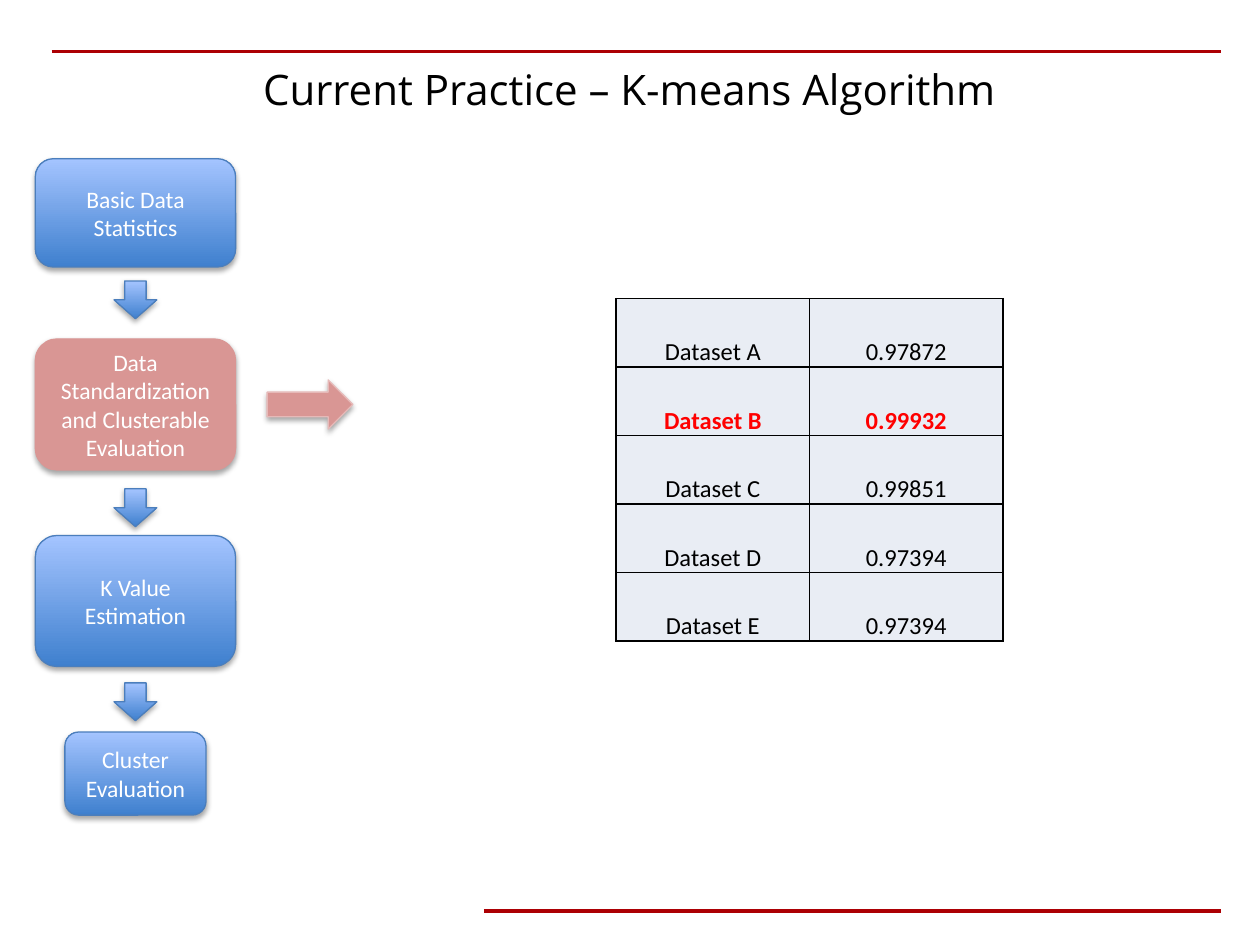
import pptx
import pptx.util
import pptx.dml.color
import pptx.enum.shapes
import pptx.enum.text
import pptx.oxml
import pptx.oxml.ns
from dataclasses import dataclass
from lxml import etree

SHAPE = pptx.enum.shapes.MSO_SHAPE
ANCHOR = pptx.enum.text.MSO_ANCHOR
UNIT = pptx.util.Inches(0.1)  # the slide is a grid of 100 columns by 75 rows


@dataclass(frozen=True)
class Theme:
    rule: str = "AC0004"
    text: str = "000000"
    inverse: str = "FFFFFF"
    alert: str = "FF0000"
    step_low: str = "3F80CE"
    step_high: str = "A4C4FF"
    step_line: str = "4B7EBC"
    active: str = "D99694"
    active_line: str = "E6B9B8"
    cell: str = "E9EDF4"
    title_font: str = "Open Sans"
    body_font: str = "Calibri"
    title_size: float = 24
    step_size: float = 13.5
    cell_size: float = 14


THEME = Theme()


def rgb(value):
    return pptx.dml.color.RGBColor.from_string(value)


def grid(*values):
    return [round(v * UNIT) for v in values]


def put_text(tf, text, size, color, font=THEME.body_font, bold=False, anchor=ANCHOR.MIDDLE):
    tf.word_wrap = True
    tf.vertical_anchor = anchor
    p = tf.paragraphs[0]
    p.alignment = pptx.enum.text.PP_ALIGN.CENTER
    r = p.add_run()
    r.text = text
    r.font.name = font
    r.font.size = pptx.util.Pt(size)
    r.font.bold = bold
    r.font.color.rgb = rgb(color)


def add_effects(sp, shadow):
    """Replace the inherited effects by a soft drop shadow, or by none."""
    effects = etree.SubElement(sp._element.spPr, pptx.oxml.ns.qn("a:effectLst"))
    if shadow:
        effects.append(pptx.oxml.parse_xml(
            f'<a:outerShdw {pptx.oxml.ns.nsdecls("a")} blurRad="39370" dist="22860" '
            'dir="5400000" rotWithShape="0"><a:srgbClr val="000000">'
            '<a:alpha val="35000"/></a:srgbClr></a:outerShdw>'))


def add_block(s, kind, box, fill=None, line=THEME.step_line):
    """Add a shadowed shape, with the step gradient unless a fill is given."""
    sp = s.shapes.add_shape(kind, *grid(*box))
    if fill:
        sp.fill.solid()
        sp.fill.fore_color.rgb = rgb(fill)
    else:
        sp.fill.gradient()
        sp.fill.gradient_angle = 90
        for stop, color in zip(sp.fill.gradient_stops, (THEME.step_low, THEME.step_high)):
            stop.color.rgb = rgb(color)
    sp.line.color.rgb = rgb(line)
    sp.line.width = pptx.util.Pt(0.75)
    add_effects(sp, shadow=True)
    return sp


def add_rule(s, left, right, y):
    cx = s.shapes.add_connector(
        pptx.enum.shapes.MSO_CONNECTOR.STRAIGHT, *grid(left, y, right, y))
    cx.line.color.rgb = rgb(THEME.rule)
    cx.line.width = pptx.util.Pt(2)
    add_effects(cx, shadow=False)


def add_title(s, box, text):
    title = s.shapes.title
    title.left, title.top, title.width, title.height = grid(*box)
    put_text(title.text_frame, text, THEME.title_size, THEME.text,
             font=THEME.title_font, anchor=ANCHOR.TOP)


def add_flow(s, box, steps, arrow_tops, active):
    """Stack centred steps with down arrows; a side arrow leaves the active one."""
    x, y, w, _ = box
    for i, (text, top, width, height) in enumerate(steps):
        colors = {"fill": THEME.active, "line": THEME.active} if i == active else {}
        sp = add_block(s, SHAPE.ROUNDED_RECTANGLE,
                       (x + (w - width) / 2, y + top, width, height), **colors)
        put_text(sp.text_frame, text, THEME.step_size, THEME.inverse)
    for top in arrow_tops:
        add_block(s, SHAPE.DOWN_ARROW, (x + (w - 3.4) / 2, y + top, 3.4, 3))
    _, top, _, height = steps[active]
    add_block(s, SHAPE.RIGHT_ARROW, (x + w + 2.5, y + top + (height - 3.9) / 2, 6.8, 3.9),
              fill=THEME.active, line=THEME.active_line)


def add_borders(cell):
    tc_pr = cell._tc.get_or_add_tcPr()
    for i, side in enumerate(("lnL", "lnR", "lnT", "lnB")):
        tc_pr.insert(i, pptx.oxml.parse_xml(
            f'<a:{side} {pptx.oxml.ns.nsdecls("a")} w="12700"><a:solidFill>'
            f'<a:srgbClr val="{THEME.text}"/></a:solidFill></a:{side}>'))


def add_scores(s, box, rows, highlight):
    table = s.shapes.add_table(len(rows), len(rows[0]), *grid(*box)).table
    table.first_row = table.horz_banding = False
    for i, row in enumerate(rows):
        for j, text in enumerate(row):
            cell = table.cell(i, j)
            cell.fill.solid()
            cell.fill.fore_color.rgb = rgb(THEME.cell)
            cell.margin_left = cell.margin_right = cell.margin_top = pptx.util.Inches(0.01)
            cell.margin_bottom = 0
            cell.vertical_anchor = ANCHOR.BOTTOM
            hit = i == highlight
            put_text_in_cell = cell.text_frame
            put_text(put_text_in_cell, text, THEME.cell_size,
                     THEME.alert if hit else THEME.text, bold=hit, anchor=None)
            add_borders(cell)


def main():
    prs = pptx.Presentation()
    prs.slide_width, prs.slide_height = grid(100, 75)
    s = prs.slides.add_slide(prs.slide_layouts.get_by_name("Title Only"))
    add_rule(s, 38.4, 96.9, 72.3)
    add_rule(s, 4.1, 96.9, 4.1)
    add_title(s, (2.8, 4.5, 94.3, 7.6), "Current Practice – K-means Algorithm")
    steps = [  # text, top, width, height
        ("Basic Data Statistics", 0, 15.9, 8.6),
        ("Data Standardization and Clusterable Evaluation", 14.3, 15.9, 10.4),
        ("K Value Estimation", 29.9, 15.9, 10.4),
        ("Cluster Evaluation", 45.5, 11.2, 6.6),
    ]
    add_flow(s, (2.8, 12.6, 15.9, 52.1), steps, arrow_tops=(9.7, 26.2, 41.6), active=1)
    scores = [
        ("Dataset A", "0.97872"),
        ("Dataset B", "0.99932"),
        ("Dataset C", "0.99851"),
        ("Dataset D", "0.97394"),
        ("Dataset E", "0.97394"),
    ]
    add_scores(s, (48.9, 23.7, 30.7, 27.2), scores, highlight=1)
    prs.save("out.pptx")


if __name__ == "__main__":
    main()
